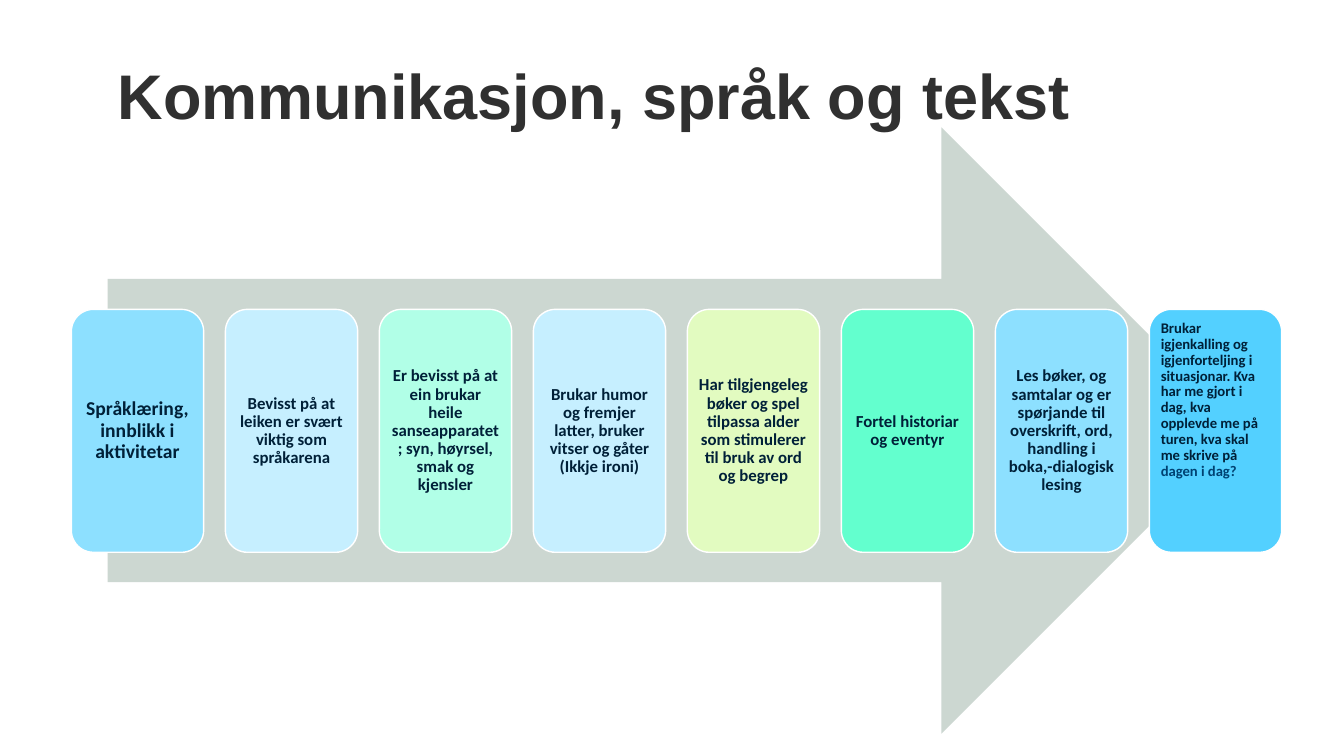
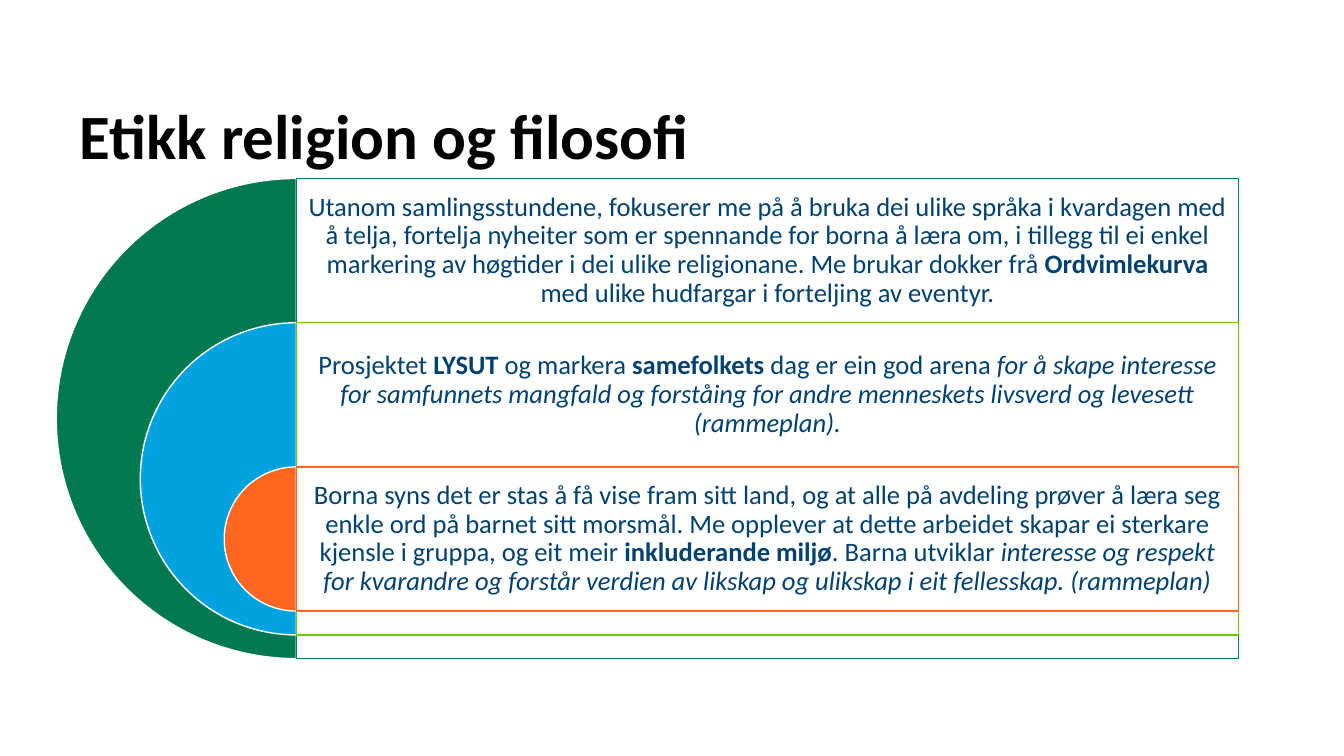
"""Build two slides: a process arrow with cards and nested half circles with text rows."""
from dataclasses import dataclass

from lxml.etree import SubElement
from pptx import Presentation
from pptx.dml.color import RGBColor
from pptx.enum.shapes import MSO_SHAPE
from pptx.enum.text import MSO_ANCHOR, PP_ALIGN
from pptx.oxml.ns import qn
from pptx.util import Pt


@dataclass(frozen=True)
class Theme:
    body_font: str = "Calibri"
    white: str = "FFFFFF"
    arrow: str = "CCD7D1"
    card_text: str = "002038"
    row_text: str = "004171"
    title_size: float = 45
    row_size: float = 19
    card_size: float = 12
    first_card_size: float = 14
    last_card_size: float = 10.5
    line_spacing: float = 0.9


T = Theme()

PROCESS_TITLE = ("Kommunikasjon, språk og tekst", "Arial", "303030", (84, 44, 792, 53))
CARDS = [
    ("8DE0FF", "Språklæring, innblikk i aktivitetar"),
    ("C6EFFF", "Bevisst på at leiken er svært viktig som språkarena"),
    ("B1FFE7", "Er bevisst på at ein brukar heile sanseapparatet; syn, høyrsel, smak og kjensler"),
    ("C6EFFF", "Brukar humor og fremjer latter, bruker vitser og gåter (Ikkje ironi)"),
    ("E2FBC0", "Har tilgjengeleg bøker og spel tilpassa alder som stimulerer til bruk av ord og begrep"),
    ("63FFCE", "Fortel historiar og eventyr"),
    ("8DE0FF", "Les bøker, og samtalar og er spørjande til overskrift, ord, handling i boka,-dialogisk lesing"),
]
LAST_FILL = "53D0FF"
LAST_TEXT = ("Brukar igjenkalling og igjenforteljing i situasjonar. Kva har me gjort i dag, "
             "kva opplevde me på turen, kva skal me skrive på ")
LAST_ENDING = "dagen i dag?"
ARROW_BOX = (77, 91, 812, 433)
CARD_LEFT, CARD_TOP, CARD_W, CARD_H, CARD_PITCH = 51, 221, 94.5, 173.5, 110

ETHICS_TITLE = ("Etikk religion og filosofi", T.body_font, "000000", (57, 70.5, 845, 57))
ROWS = [
    ("007953", "007953", [
        ("Utanom samlingsstundene, fokuserer me på å bruka dei ulike språka i kvardagen med "
         "å telja, fortelja nyheiter som er spennande for borna å læra om, i tillegg til ei "
         "enkel markering av høgtider i dei ulike religionane. Me brukar dokker frå ", ""),
        ("Ordvimlekurva ", "b"),
        ("med ulike hudfargar i forteljing av eventyr.", "")]),
    ("00A3E0", "65CB00", [
        ("Prosjektet ", ""), ("LYSUT", "b"), (" og markera ", ""), ("samefolkets", "b"),
        (" dag er ein god arena ", ""),
        ("for å skape interesse for samfunnets mangfald og forståing for andre menneskets "
         "livsverd og levesett (rammeplan).", "i")]),
    ("FF661F", "FF661F", [
        ("Borna syns det er stas å få vise fram sitt land, og at alle på avdeling prøver å "
         "læra seg enkle ord på barnet sitt morsmål. Me opplever at dette arbeidet skapar ei "
         "sterkare kjensle i gruppa, og eit meir ", ""),
        ("inkluderande miljø", "b"), (". Barna utviklar ", ""),
        ("interesse og respekt for kvarandre og forstår verdien av likskap og ulikskap i eit "
         "fellesskap. (rammeplan)", "i")]),
]
CENTER_X, ROWS_TOP, ROW_W, ROW_H, DIAMETER_STEP = 211.7, 127.5, 673, 103, 120
ROW_INSET = 6


def add_shape(s, kind, box, fill, line=None):
    sp = s.shapes.add_shape(kind, *map(Pt, box))
    sp.shadow.inherit = False
    sp.fill.solid()
    sp.fill.fore_color.rgb = RGBColor.from_string(fill)
    if line:
        sp.line.color.rgb = RGBColor.from_string(line)
        sp.line.width = Pt(1)
    else:
        sp.line.fill.background()
    return sp


def set_text(sp, runs, size, font=T.body_font, inset=0, bottom=None,
             align=PP_ALIGN.CENTER, anchor=MSO_ANCHOR.MIDDLE):
    tf = sp.text_frame
    tf.word_wrap = True
    tf.vertical_anchor = anchor
    tf.margin_left = tf.margin_right = tf.margin_top = Pt(inset)
    tf.margin_bottom = Pt(inset if bottom is None else bottom)
    p = tf.paragraphs[0]
    p.alignment = align
    p.line_spacing = T.line_spacing
    for text, color, style in runs:
        r = p.add_run()
        r.text = text
        r.font.name = font
        r.font.size = Pt(size)
        r.font.bold = "b" in style
        r.font.italic = "i" in style
        r.font.color.rgb = RGBColor.from_string(color)


def add_title(s, text, font, color, box):
    sp = s.shapes.add_textbox(*map(Pt, box))
    set_text(sp, [(text, color, "b")], T.title_size, font, align=PP_ALIGN.LEFT)


def add_card(s, i, fill, runs, size, **layout):
    box = (CARD_LEFT + i * CARD_PITCH, CARD_TOP, CARD_W, CARD_H)
    sp = add_shape(s, MSO_SHAPE.ROUNDED_RECTANGLE, box, fill, T.white)
    set_text(sp, runs, size, inset=max(3.6, 0.3 * size), **layout)


def build_process(s):
    add_title(s, *PROCESS_TITLE)
    add_shape(s, MSO_SHAPE.RIGHT_ARROW, ARROW_BOX, T.arrow)
    for i, (fill, text) in enumerate(CARDS):
        size = T.card_size if i else T.first_card_size
        add_card(s, i, fill, [(text, T.card_text, "b")], size)
    runs = [(LAST_TEXT, T.card_text, "b"), (LAST_ENDING, T.row_text, "b")]
    add_card(s, len(CARDS), LAST_FILL, runs, T.last_card_size,
             align=PP_ALIGN.LEFT, anchor=MSO_ANCHOR.TOP)


def build_ethics(s):
    add_title(s, *ETHICS_TITLE)
    for i, (fill, line, parts) in enumerate(ROWS):
        d = ROW_H + DIAMETER_STEP * (len(ROWS) - 1 - i)
        top = ROWS_TOP + i * ROW_H
        pie = add_shape(s, MSO_SHAPE.PIE, (CENTER_X - d / 2, top, d, d), fill, T.white)
        pie.adjustments[0], pie.adjustments[1] = 54, 162
        row = add_shape(s, MSO_SHAPE.RECTANGLE, (CENTER_X, top, ROW_W, d), T.white, line)
        color = row.fill._xPr.find(qn("a:solidFill"))[0]
        SubElement(color, qn("a:alpha"), val="90000")
        runs = [(text, T.row_text, style) for text, style in parts]
        set_text(row, runs, T.row_size, inset=ROW_INSET, bottom=d - ROW_H + ROW_INSET)


def main():
    prs = Presentation()
    prs.slide_width, prs.slide_height = Pt(960), Pt(540)
    for build in (build_process, build_ethics):
        build(prs.slides.add_slide(prs.slide_layouts[6]))
    prs.save("out.pptx")


if __name__ == "__main__":
    main()
